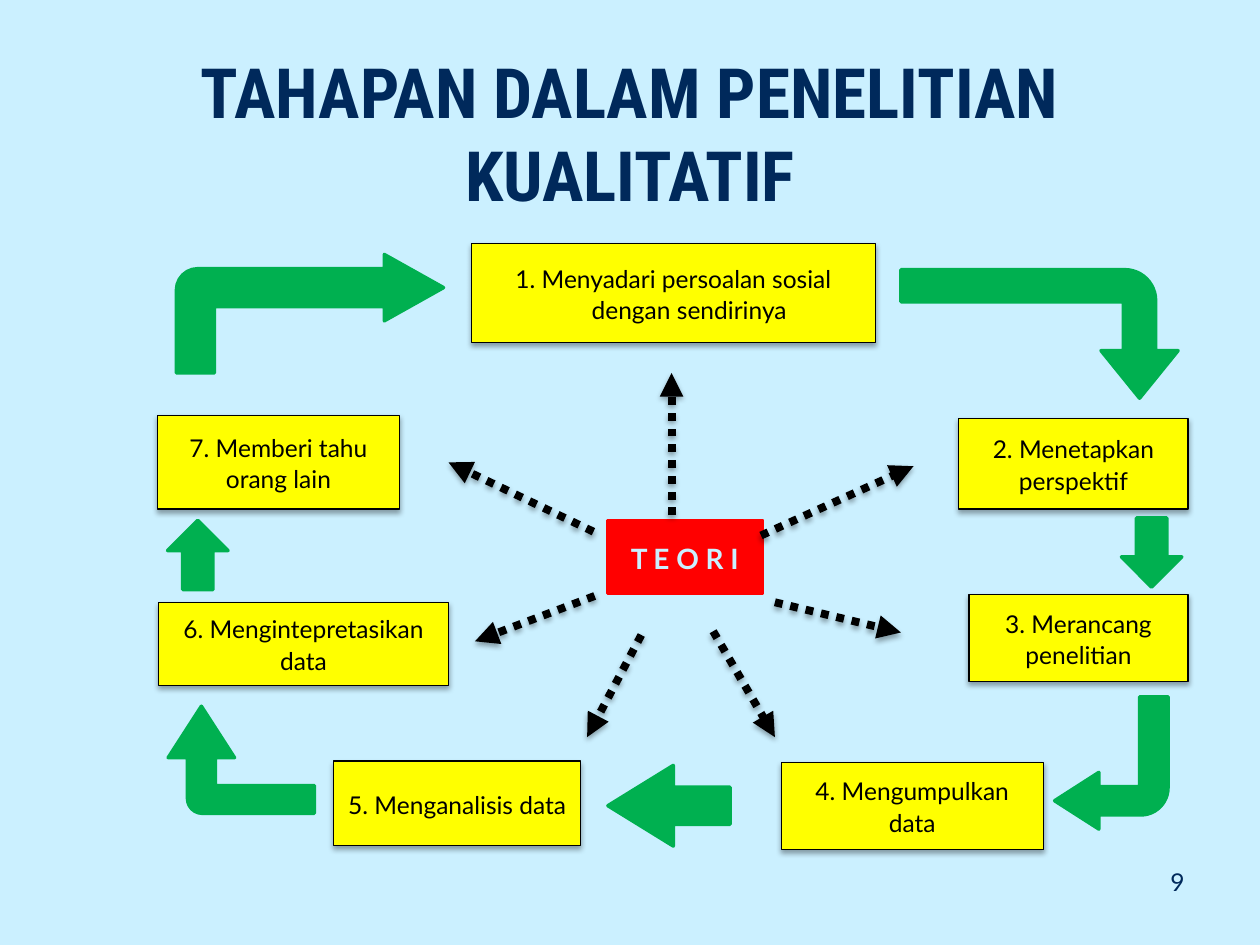
from dataclasses import dataclass

from lxml import etree
from pptx import Presentation
from pptx.dml.color import RGBColor
from pptx.enum.dml import MSO_LINE
from pptx.enum.shapes import MSO_CONNECTOR, MSO_SHAPE
from pptx.enum.text import MSO_ANCHOR, MSO_AUTO_SIZE, PP_ALIGN
from pptx.oxml.ns import qn
from pptx.util import Inches, Pt

RECTANGLE = MSO_SHAPE.RECTANGLE
BENT_ARROW = MSO_SHAPE.BENT_ARROW
DOWN_ARROW = MSO_SHAPE.DOWN_ARROW
STRAIGHT = MSO_CONNECTOR.STRAIGHT
DOTTED = MSO_LINE.ROUND_DOT
CENTER = PP_ALIGN.CENTER
RIGHT = PP_ALIGN.RIGHT
TOP = MSO_ANCHOR.TOP
MIDDLE = MSO_ANCHOR.MIDDLE
NO_AUTOFIT = MSO_AUTO_SIZE.NONE


@dataclass(frozen=True)
class Theme:
    background: str = "CBF0FF"
    navy: str = "00295B"
    black: str = "000000"
    yellow: str = "FFFF00"
    red: str = "FF0000"
    green: str = "00B050"
    title_font: str = "Roboto Condensed"
    body_font: str = "Lato"
    title_size: float = 39.6
    body_size: float = 14
    theory_size: float = 16
    thin_line: float = 0.75
    thick_line: float = 2
    ray_line: float = 4.5


@dataclass(frozen=True)
class Box:
    left: float
    top: float
    width: float
    height: float

    def lengths(self):
        return [Inches(value) for value in (self.left, self.top, self.width, self.height)]


@dataclass(frozen=True)
class Step:
    text: str
    box: Box
    hanging: float = 0


@dataclass(frozen=True)
class BlockArrow:
    kind: int
    box: Box
    rotation: float = 0
    flipped: bool = False
    adjustments: tuple = ()


@dataclass(frozen=True)
class Ray:
    start: tuple
    end: tuple


THEME = Theme()

STEPS = (
    Step("1. Menyadari persoalan sosial dengan sendirinya", Box(3.74, 1.93, 3.21, 0.79), 0.25),
    Step("2. Menetapkan perspektif", Box(7.61, 3.32, 1.82, 0.72)),
    Step("3. Merancang penelitian", Box(7.69, 4.72, 1.74, 0.69)),
    Step("4. Mengumpulkan data", Box(6.2, 6.05, 2.08, 0.69)),
    Step("5. Menganalisis data", Box(2.65, 6.04, 1.96, 0.67)),
    Step("6. Mengintepretasikan data", Box(1.26, 4.78, 2.3, 0.66)),
    Step("7. Memberi tahu orang lain", Box(1.25, 3.3, 1.92, 0.74)),
)

BLOCK_ARROWS = (
    BlockArrow(BENT_ARROW, Box(7.74, 1.55, 1.02, 2.2), 90, adjustments=(0.25, 0.3, 0.37, 0.24)),
    BlockArrow(DOWN_ARROW, Box(8.9, 4.11, 0.48, 0.55)),
    BlockArrow(BENT_ARROW, Box(8.37, 5.53, 0.9, 1.05), 180, adjustments=(0.25, 0.25, 0.39, 0.24)),
    BlockArrow(DOWN_ARROW, Box(4.99, 5.91, 0.64, 0.97), 270, True, (0.46, 0.81)),
    BlockArrow(BENT_ARROW, Box(1.49, 5.45, 0.85, 1.16), 270, adjustments=(0.26, 0.31, 0.48, 0.14)),
    BlockArrow(DOWN_ARROW, Box(1.33, 4.13, 0.48, 0.55), flipped=True),
    BlockArrow(BENT_ARROW, Box(1.4, 2.02, 2.12, 0.94), adjustments=(0.32, 0.28, 0.5, 0.18)),
)

RAYS = (
    Ray((5.33, 4.09), (5.33, 2.96)),
    Ray((6.04, 4.25), (7.25, 3.7)),
    Ray((6.15, 4.78), (7.15, 5.02)),
    Ray((5.66, 5.01), (6.15, 5.85)),
    Ray((5.09, 5.04), (4.66, 5.85)),
    Ray((4.72, 4.73), (3.77, 5.09)),
    Ray((4.71, 4.22), (3.56, 3.67)),
)


def write_text(shape, text: str, *, size: float, color: str, font: str = THEME.body_font,
               bold: bool = False, align=CENTER, anchor=MIDDLE, hanging: float = 0,
               line_spacing: float = 1, space_after: float = 0) -> None:
    frame = shape.text_frame
    frame.word_wrap = True
    frame.auto_size = NO_AUTOFIT
    frame.vertical_anchor = anchor
    paragraph = frame.paragraphs[0]
    paragraph.alignment = align
    paragraph.line_spacing = line_spacing
    paragraph.space_after = Pt(space_after)
    if hanging:
        properties = paragraph._p.get_or_add_pPr()
        properties.set("marL", str(Inches(hanging)))
        properties.set("indent", str(-Inches(hanging)))
    run = paragraph.add_run()
    run.text = text
    run.font.name = font
    run.font.size = Pt(size)
    run.font.bold = bold
    run.font.color.rgb = RGBColor.from_string(color)


def set_effects(shape, shadow: bool) -> None:
    effects = etree.SubElement(shape._element.spPr, qn("a:effectLst"))
    if shadow:
        outer = etree.SubElement(effects, qn("a:outerShdw"), blurRad=str(Pt(3.1)),
                                 dist=str(Pt(1.8)), dir="5400000", rotWithShape="0")
        color = etree.SubElement(outer, qn("a:srgbClr"), val=THEME.black)
        etree.SubElement(color, qn("a:alpha"), val="35000")


def add_filled_shape(slide, kind: int, box: Box, *, fill: str, line: str,
                     line_width: float, shadow: bool = False):
    shape = slide.shapes.add_shape(kind, *box.lengths())
    shape.fill.solid()
    shape.fill.fore_color.rgb = RGBColor.from_string(fill)
    shape.line.color.rgb = RGBColor.from_string(line)
    shape.line.width = Pt(line_width)
    set_effects(shape, shadow)
    return shape


def add_step(slide, step: Step) -> None:
    shape = add_filled_shape(slide, RECTANGLE, step.box, fill=THEME.yellow, line=THEME.black,
                             line_width=THEME.thin_line, shadow=True)
    write_text(shape, step.text, size=THEME.body_size, color=THEME.black,
               hanging=step.hanging, line_spacing=1.07, space_after=8)


def add_block_arrow(slide, arrow: BlockArrow) -> None:
    shape = add_filled_shape(slide, arrow.kind, arrow.box, fill=THEME.green, line=THEME.green,
                             line_width=THEME.thick_line)
    shape.rotation = arrow.rotation
    if arrow.flipped:
        shape._element.spPr.xfrm.set("flipV", "1")
    for index, value in enumerate(arrow.adjustments):
        shape.adjustments[index] = value


def add_ray(slide, ray: Ray) -> None:
    ends = [Inches(value) for value in ray.start + ray.end]
    connector = slide.shapes.add_connector(STRAIGHT, *ends)
    connector.line.color.rgb = RGBColor.from_string(THEME.black)
    connector.line.width = Pt(THEME.ray_line)
    connector.line.dash_style = DOTTED
    etree.SubElement(connector.line._get_or_add_ln(), qn("a:tailEnd"), type="triangle")
    set_effects(connector, True)


def main() -> None:
    presentation = Presentation()
    presentation.slide_width, presentation.slide_height = Inches(10), Inches(7.5)
    slide = presentation.slides.add_slide(presentation.slide_layouts[5])
    slide.background.fill.solid()
    slide.background.fill.fore_color.rgb = RGBColor.from_string(THEME.background)

    title = slide.shapes.title
    title.left, title.top, title.width, title.height = Box(1.25, 0.68, 7.5, 0.74).lengths()
    write_text(title, "TAHAPAN DALAM PENELITIAN KUALITATIF", size=THEME.title_size,
               color=THEME.navy, font=THEME.title_font, bold=True)
    page_number = slide.shapes.add_textbox(*Box(7.17, 6.83, 2.33, 0.52).lengths())
    write_text(page_number, "9", size=THEME.body_size, color=THEME.navy, align=RIGHT, anchor=TOP)

    for step in STEPS:
        add_step(slide, step)
    theory = add_filled_shape(slide, RECTANGLE, Box(4.82, 4.13, 1.23, 0.58), fill=THEME.red,
                              line=THEME.red, line_width=THEME.thick_line)
    write_text(theory, "T E O R I", size=THEME.theory_size, color=THEME.background, bold=True,
               line_spacing=1.07, space_after=8)
    for arrow in BLOCK_ARROWS:
        add_block_arrow(slide, arrow)
    for ray in RAYS:
        add_ray(slide, ray)
    presentation.save("out.pptx")


if __name__ == "__main__":
    main()
